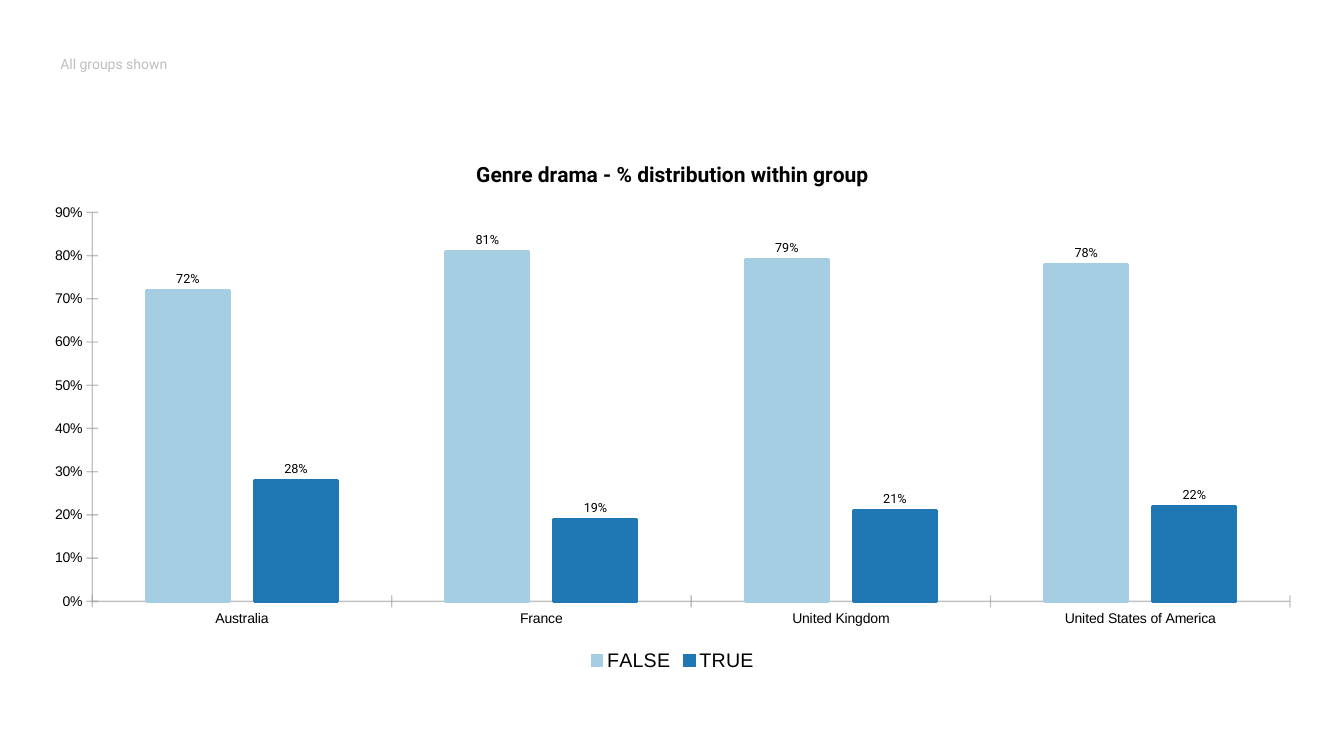
from dataclasses import dataclass

from pptx import Presentation
from pptx.chart.chart import Chart
from pptx.chart.data import CategoryChartData
from pptx.chart.series import BarSeries
from pptx.dml.color import RGBColor
from pptx.enum.chart import XL_CHART_TYPE, XL_LABEL_POSITION, XL_LEGEND_POSITION, XL_TICK_MARK
from pptx.oxml import parse_xml
from pptx.oxml.ns import nsdecls, qn
from pptx.slide import Slide
from pptx.text.text import Font
from pptx.util import Inches, Pt

LIGHT_BLUE = RGBColor(0xA6, 0xCE, 0xE3)
DARK_BLUE = RGBColor(0x1F, 0x78, 0xB4)
AXIS_GREY = RGBColor(0x99, 0x99, 0x99)
NOTE_GREY = RGBColor(0xBE, 0xBE, 0xBE)
BLACK = RGBColor(0x00, 0x00, 0x00)

PERCENT = "0%"
COUNTRIES = ["Australia", "France", "United Kingdom", "United States of America"]


@dataclass(frozen=True)
class GenreShare:
    name: str
    values: tuple[float, ...]
    color: RGBColor


SHARES = [
    GenreShare("FALSE", (0.72, 0.81, 0.79, 0.78), LIGHT_BLUE),
    GenreShare("TRUE", (0.28, 0.19, 0.21, 0.22), DARK_BLUE),
]


def set_font(font: Font, name: str, size: float, color: RGBColor = BLACK, bold: bool = False) -> None:
    font.name = name
    font.size = Pt(size)
    font.bold = bold
    font.color.rgb = color


def add_note(slide: Slide) -> None:
    note = slide.shapes.add_textbox(Inches(0.5), Inches(0.5), Inches(6), Inches(1))
    note.text_frame.word_wrap = True
    paragraph = note.text_frame.paragraphs[0]
    paragraph.text = "All groups shown"
    set_font(paragraph.font, "Roboto", 10, NOTE_GREY)


def add_share_chart(slide: Slide) -> Chart:
    chart_data = CategoryChartData(number_format=PERCENT)
    chart_data.categories = COUNTRIES
    for share in SHARES:
        chart_data.add_series(share.name, share.values)
    return slide.shapes.add_chart(
        XL_CHART_TYPE.COLUMN_CLUSTERED,
        Inches(0.29), Inches(1.39), Inches(12.76), Inches(5.31),
        chart_data,
    ).chart


def format_title_and_legend(chart: Chart) -> None:
    set_font(chart.font, "Roboto", 18)
    chart.has_title = True
    title = chart.chart_title.text_frame.paragraphs[0]
    title.text = "Genre drama - % distribution within group"
    set_font(title.font, "Roboto", 15, bold=True)

    chart.has_legend = True
    chart.legend.position = XL_LEGEND_POSITION.BOTTOM
    chart.legend.include_in_layout = False
    set_font(chart.legend.font, "Arial", 14)


def format_axes(chart: Chart) -> None:
    for axis in (chart.category_axis, chart.value_axis):
        axis.has_major_gridlines = False
        axis.major_tick_mark = XL_TICK_MARK.CROSS
        axis.minor_tick_mark = XL_TICK_MARK.NONE
        axis.format.line.width = Pt(1)
        axis.format.line.color.rgb = AXIS_GREY
        set_font(axis.tick_labels.font, "Arial", 10)
    chart.value_axis.minimum_scale = 0
    chart.value_axis.tick_labels.number_format = PERCENT
    chart.value_axis.tick_labels.number_format_is_linked = False


def format_series(series: BarSeries, color: RGBColor) -> None:
    series.format.fill.solid()
    series.format.fill.fore_color.rgb = color
    series.format.line.color.rgb = color
    series.format.line.width = Pt(2)
    labels = series.data_labels
    labels.show_value = True
    labels.position = XL_LABEL_POSITION.OUTSIDE_END
    labels.number_format = PERCENT
    labels.number_format_is_linked = False
    set_font(labels.font, "Roboto", 9)


def refine_plot_area(chart: Chart) -> None:
    """Fix the inner plot position and make the axis lines 60% opaque."""
    plot_area = chart.element.find(".//" + qn("c:plotArea"))
    for color in plot_area.iter(qn("a:srgbClr")):
        if color.get("val") == str(AXIS_GREY):
            color.append(parse_xml(f'<a:alpha {nsdecls("a")} val="60000"/>'))

    old_layout = plot_area.find(qn("c:layout"))
    if old_layout is not None:
        plot_area.remove(old_layout)
    plot_area.insert(0, parse_xml(
        f'<c:layout {nsdecls("c")}><c:manualLayout><c:layoutTarget val="inner"/>'
        '<c:xMode val="edge"/><c:yMode val="edge"/>'
        '<c:x val="0.049"/><c:y val="0.135"/><c:w val="0.931"/><c:h val="0.727"/>'
        '</c:manualLayout></c:layout>'
    ))


def main() -> None:
    presentation = Presentation()
    presentation.slide_width = Inches(13.33)
    presentation.slide_height = Inches(7.5)
    slide = presentation.slides.add_slide(presentation.slide_layouts[6])

    chart = add_share_chart(slide)
    format_title_and_legend(chart)
    format_axes(chart)
    plot = chart.plots[0]
    plot.vary_by_categories = False
    plot.gap_width = 130
    plot.overlap = -30
    for series, share in zip(plot.series, SHARES):
        format_series(series, share.color)
    refine_plot_area(chart)

    add_note(slide)
    presentation.save("out.pptx")


if __name__ == "__main__":
    main()
